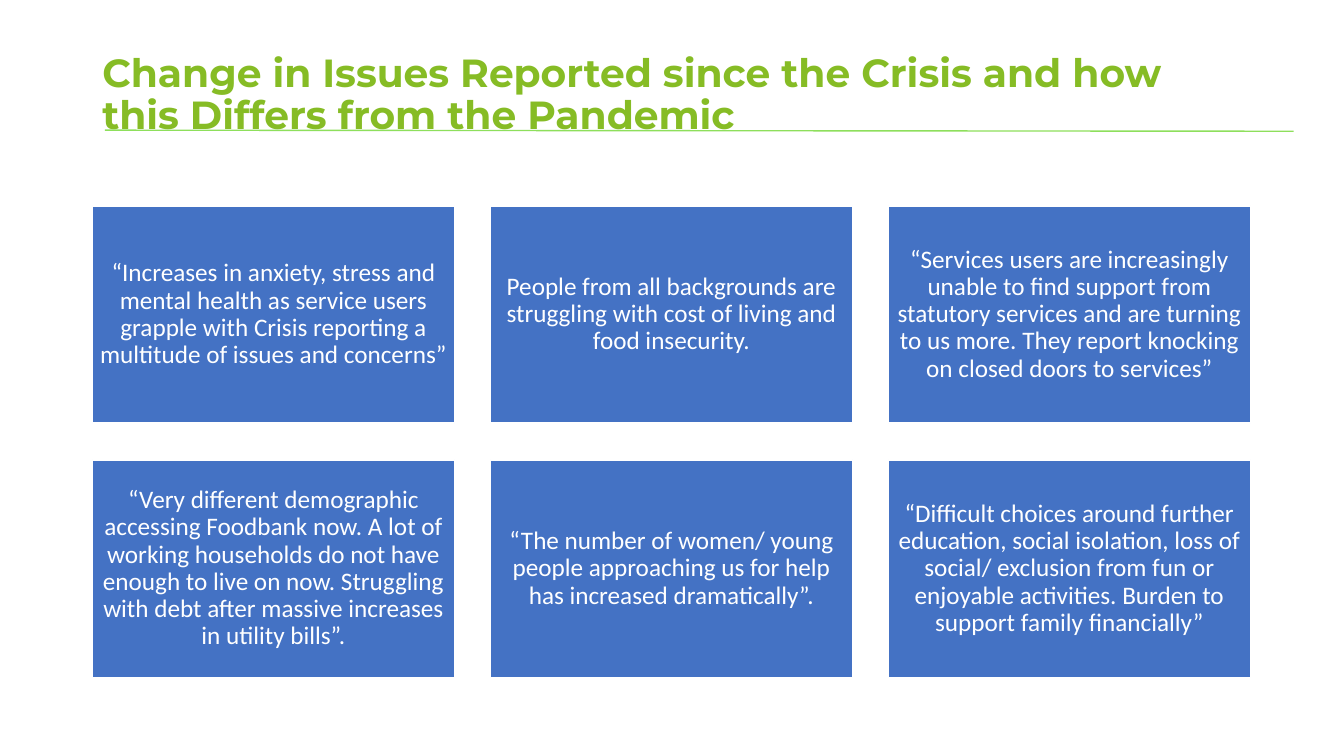
from dataclasses import dataclass

import pptx
import pptx.dml.color
import pptx.enum.shapes
import pptx.enum.text
import pptx.oxml
import pptx.oxml.ns
import pptx.util

EMU_PER_PX = 9525
PAGE_SIZE = (1280, 720)

TITLE = "Change in Issues Reported since the Crisis and how this Differs from the Pandemic"
QUOTES = [
    "“Increases in anxiety, stress and mental health as service users grapple with "
    "Crisis reporting a multitude of issues and concerns”",
    "People from all backgrounds are struggling with cost of living and food insecurity.",
    "“Services users are increasingly unable to find support from statutory services "
    "and are turning to us more. They report knocking on closed doors to services”",
    "“Very different demographic accessing Foodbank now. A lot of working households "
    "do not have enough to live on now. Struggling with debt after massive increases "
    "in utility bills”.",
    "“The number of women/ young people approaching us for help has increased "
    "dramatically”.",
    "“Difficult choices around further education, social isolation, loss of social/ "
    "exclusion from fun or enjoyable activities. Burden to support family financially”",
]

COLUMNS = 3
CARD_LEFT, CARD_TOP = 88, 196
CARD_WIDTH, CARD_HEIGHT = 345, 207
COLUMN_STEP, ROW_STEP = 379, 242
CARD_INSET = 7


@dataclass(frozen=True)
class Theme:
    title_font: str = "Montserrat"
    body_font: str = "Calibri"
    title_size: int = 28
    body_size: int = 18
    title_color: str = "86BC25"
    rule_color: str = "8EDF5C"
    card_color: str = "4472C4"
    white: str = "FFFFFF"
    line_width: int = 1
    line_spacing: float = 0.9


def px(*lengths):
    return [pptx.util.Emu(length * EMU_PER_PX) for length in lengths]


def rgb(color):
    return pptx.dml.color.RGBColor.from_string(color)


class SlideBuilder:
    def __init__(self, page, theme):
        self.page = page
        self.theme = theme

    def set_text(self, box, text, font, size, color, align, bold=False):
        """Fill a shape with one vertically centred, wrapped paragraph."""
        frame = box.text_frame
        frame.word_wrap = True
        frame.vertical_anchor = pptx.enum.text.MSO_ANCHOR.MIDDLE
        para = frame.paragraphs[0]
        para.text = text
        para.alignment = align
        para.line_spacing = self.theme.line_spacing
        para.font.name = font
        para.font.size = pptx.util.Pt(size)
        para.font.bold = bold
        para.font.color.rgb = rgb(color)

    def style_line(self, line, color):
        line.color.rgb = rgb(color)
        line.width = pptx.util.Pt(self.theme.line_width)

    def title(self, text, left, top, width, height):
        theme = self.theme
        box = self.page.shapes.add_textbox(*px(left, top, width, height))
        self.set_text(box, text, theme.title_font, theme.title_size, theme.title_color,
                      pptx.enum.text.PP_ALIGN.LEFT, bold=True)

    def rule(self, start_x, start_y, end_x, end_y):
        connector = self.page.shapes.add_connector(
            pptx.enum.shapes.MSO_CONNECTOR.STRAIGHT, *px(start_x, start_y, end_x, end_y))
        self.style_line(connector.line, self.theme.rule_color)
        properties = connector._element.spPr
        properties.append(pptx.oxml.parse_xml(
            f"<a:effectLst {pptx.oxml.ns.nsdecls('a')}/>"))

    def card(self, text, left, top, width, height):
        theme = self.theme
        box = self.page.shapes.add_shape(
            pptx.enum.shapes.MSO_SHAPE.RECTANGLE, *px(left, top, width, height))
        box.shadow.inherit = False
        box.fill.solid()
        box.fill.fore_color.rgb = rgb(theme.card_color)
        self.style_line(box.line, theme.white)
        frame = box.text_frame
        inset, = px(CARD_INSET)
        frame.margin_left = frame.margin_right = inset
        frame.margin_top = frame.margin_bottom = inset
        self.set_text(box, text, theme.body_font, theme.body_size, theme.white,
                      pptx.enum.text.PP_ALIGN.CENTER)


def main():
    deck = pptx.Presentation()
    deck.slide_width, deck.slide_height = px(*PAGE_SIZE)
    page = deck.slides.add_slide(deck.slide_layouts[6])
    builder = SlideBuilder(page, Theme())

    builder.title(TITLE, 88, 38, 1104, 107)
    builder.rule(100, 124, 1232, 125)
    for index, quote in enumerate(QUOTES):
        row, column = divmod(index, COLUMNS)
        builder.card(quote, CARD_LEFT + column * COLUMN_STEP, CARD_TOP + row * ROW_STEP,
                     CARD_WIDTH, CARD_HEIGHT)

    deck.save("out.pptx")


if __name__ == "__main__":
    main()
